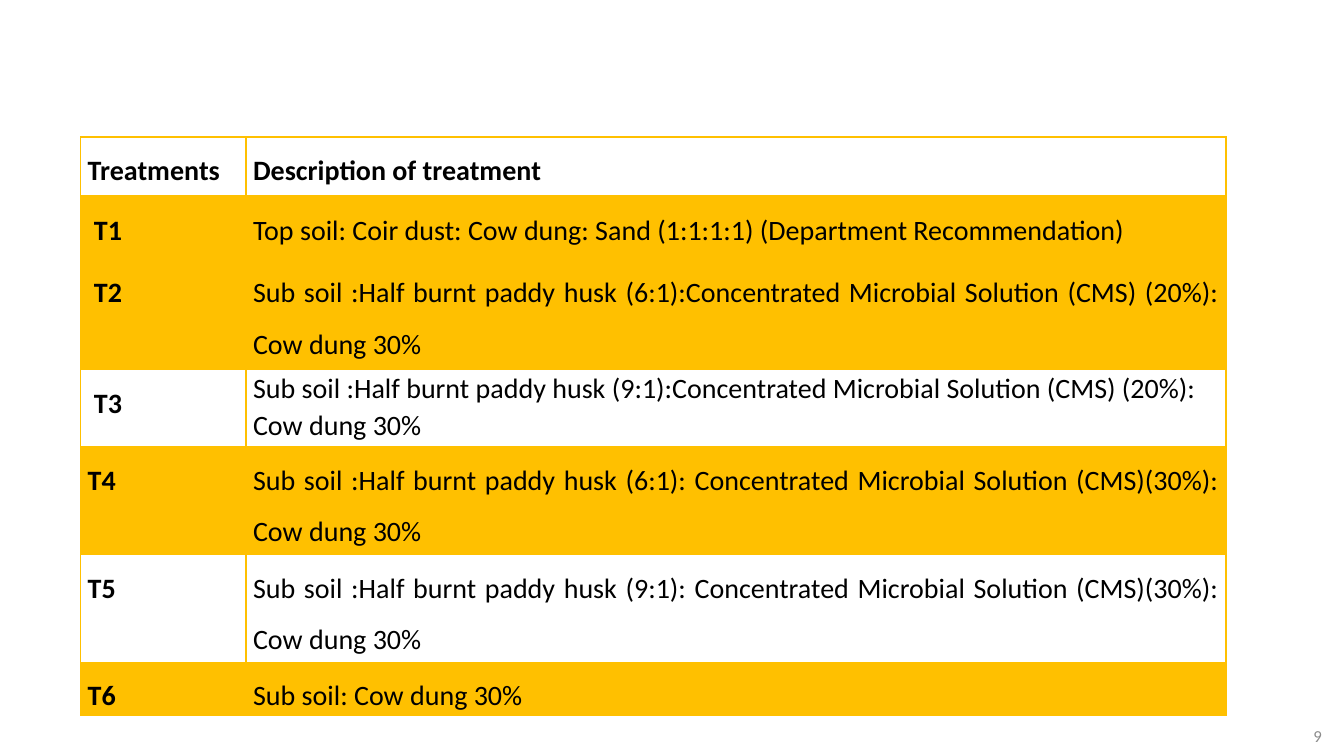
import pptx
import pptx.util
import pptx.dml.color
import pptx.enum.text
import pptx.oxml
import pptx.oxml.ns
from lxml import etree

Inches = pptx.util.Inches
Pt = pptx.util.Pt
RGB = pptx.dml.color.RGBColor
ALIGN = pptx.enum.text.PP_ALIGN
ANCHOR = pptx.enum.text.MSO_ANCHOR
qn = pptx.oxml.ns.qn

GOLD = RGB(0xFF, 0xC0, 0x00)
BLACK = RGB(0, 0, 0)
GREY = RGB(0x8C, 0x8C, 0x8C)

HEAD = ("Treatments ", "Description of treatment")
ROWS = [
    (0.59, False, [HEAD]),
    (1.72, True, [
        (" T1", "Top soil: Coir dust: Cow dung: Sand (1:1:1:1) (Department Recommendation)"),
        (" T2", "Sub soil :Half burnt paddy husk (6:1):Concentrated Microbial Solution (CMS) (20%): Cow dung 30%"),
    ]),
    (0.76, False, [(" T3", "Sub soil :Half burnt paddy husk (9:1):Concentrated Microbial Solution (CMS) (20%): Cow dung 30%")]),
    (1.07, True, [("T4", "Sub soil :Half burnt paddy husk (6:1): Concentrated Microbial Solution (CMS)(30%): Cow dung 30%")]),
    (1.07, False, [("T5", "Sub soil :Half burnt paddy husk (9:1): Concentrated Microbial Solution (CMS)(30%): Cow dung 30%")]),
    (0.53, True, [("T6", "Sub soil: Cow dung 30%")]),
]
COLS = (1.64, 9.72)
LOOKS = {
    (2, 1): dict(align=ALIGN.LEFT, lead=1.07, after=0),
    (4, 1): dict(after=0),
    (5, 0): dict(after=0),
    (5, 1): dict(after=0),
}


def write(frame, lines, size=20, color=BLACK, bold=False,
          align=ALIGN.JUSTIFY, lead=1.5, after=8):
    for pos, line in enumerate(lines):
        para = frame.add_paragraph() if pos else frame.paragraphs[0]
        para.alignment = align
        para.line_spacing = lead
        para.space_after = Pt(after)
        run = para.add_run()
        run.text = line
        run.font.name = "Calibri"
        run.font.size = Pt(size)
        run.font.bold = bold
        run.font.color.rgb = color


def edge(cell, side, width):
    props = cell._tc.get_or_add_tcPr()
    line = etree.SubElement(props, qn("a:ln" + side), w=str(Pt(width)))
    fill = etree.SubElement(line, qn("a:solidFill"))
    etree.SubElement(fill, qn("a:srgbClr"), val=str(GOLD))


def paint(cell, tint):
    if not tint:
        cell.fill.background()
        return
    cell.fill.solid()
    cell.fill.fore_color.rgb = GOLD
    color = cell._tc.tcPr.find(".//" + qn("a:solidFill") + "/" + qn("a:srgbClr"))
    etree.SubElement(color, qn("a:alpha"), val="20000")


def draw_table(slide):
    high = sum(row[0] for row in ROWS)
    frame = slide.shapes.add_table(
        len(ROWS), len(COLS), Inches(0.8), Inches(1.36),
        Inches(sum(COLS)), Inches(high))
    table = frame.table
    table.first_row = False
    table.horz_banding = False
    for col, width in zip(table.columns, COLS):
        col.width = Inches(width)
    for r, (height, tint, pairs) in enumerate(ROWS):
        table.rows[r].height = Inches(height)
        for c, lines in enumerate(zip(*pairs)):
            cell = table.cell(r, c)
            cell.margin_left = cell.margin_right = Inches(0.07)
            cell.margin_top = cell.margin_bottom = 0
            for side in "LRTB":
                thick = (r, side) in ((0, "B"), (1, "T"))
                edge(cell, side, 2 if thick else 1)
            paint(cell, tint)
            write(cell.text_frame, lines, bold=r == 0 or c == 0,
                  **LOOKS.get((r, c), {}))


def draw_number(slide):
    box = slide.shapes.add_textbox(
        Inches(10.21), Inches(7.1), Inches(3), Inches(0.4))
    frame = box.text_frame
    frame.word_wrap = True
    frame.vertical_anchor = ANCHOR.MIDDLE
    write(frame, ["9"], size=12, color=GREY, align=ALIGN.RIGHT, lead=1, after=0)


def main():
    deck = pptx.Presentation()
    deck.slide_width = Inches(13.33)
    deck.slide_height = Inches(7.5)
    slide = deck.slides.add_slide(deck.slide_layouts[6])
    draw_number(slide)
    draw_table(slide)
    deck.save("out.pptx")


if __name__ == "__main__":
    main()
